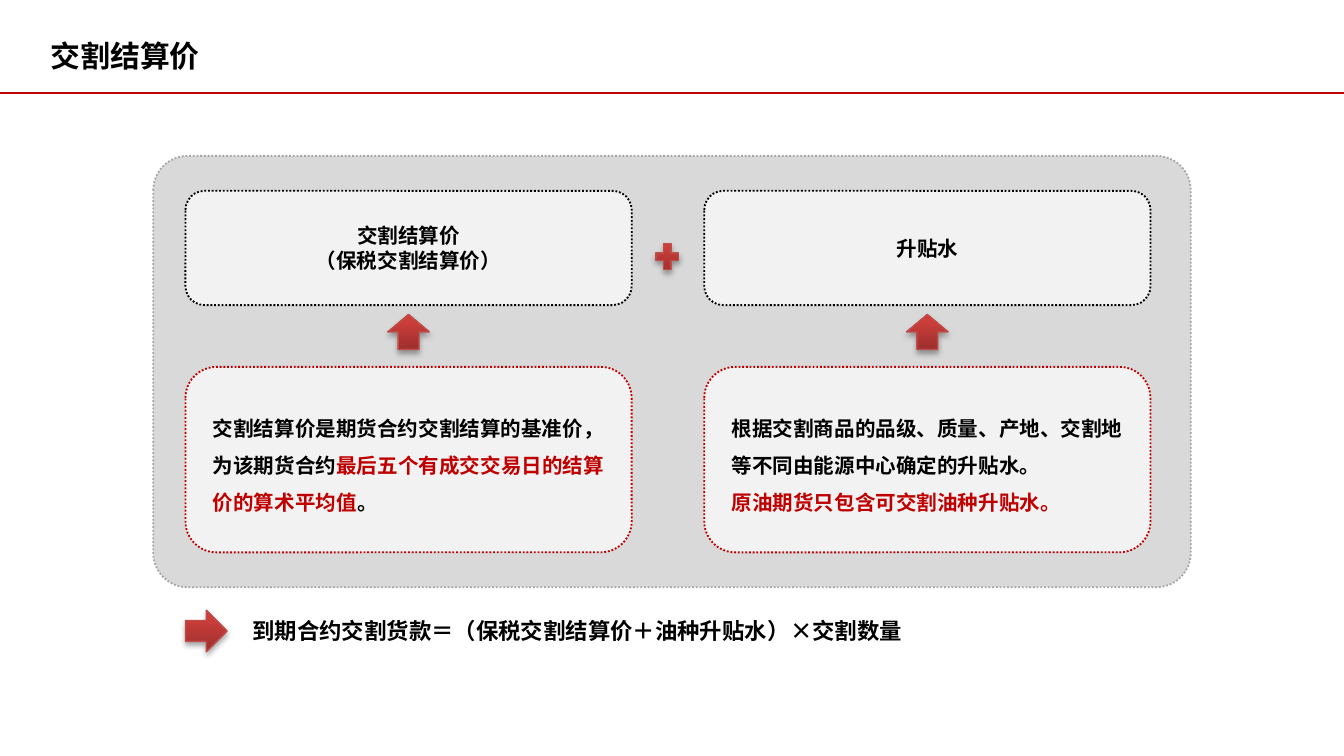
import pptx
import pptx.dml.color
import pptx.enum.dml
import pptx.enum.shapes
import pptx.enum.text
import pptx.oxml
import pptx.oxml.ns
import pptx.util
from pptx.util import Inches

FONT = "Noto Sans CJK SC"
COLORS = {
    "black": "000000",
    "red": "C00000",
    "panel": "D9D9D9",
    "panel_line": "A6A6A6",
    "box": "F2F2F2",
    "marker_line": "BF4C48",
}
MARKER_STOPS = [(0, "9C2F2D"), (80, "CB3E3A"), (100, "CE3B37")]
PRESET = pptx.enum.shapes.MSO_SHAPE
ALIGN = pptx.enum.text.PP_ALIGN

SLIDE_WIDTH = 10
COLUMN_LEFTS = [1.38, 5.24]
COLUMN_WIDTH = 3.32
HEADINGS = [["交割结算价", "（保税交割结算价）"], ["升贴水"]]
# Each explanation is a list of paragraphs, each a list of (text, color) runs.
EXPLANATIONS = [
    [[("交割结算价是期货合约交割结算的基准价，为该期货合约", "black"),
      ("最后五个有成交交易日的结算价的算术平均值", "red"),
      ("。", "black")]],
    [[("根据交割商品的品级、质量、产地、交割地等不同由能源中心确定的升贴水。", "black")],
     [("原油期货只包含可交割油种升贴水。", "red")]],
]


def rgb(name):
    return pptx.dml.color.RGBColor.from_string(COLORS[name])


def drawing_xml(body):
    """Parse one DrawingML element whose tag is given without its namespace."""
    tag, rest = body[1:].split(" ", 1)
    return pptx.oxml.parse_xml(f"<a:{tag} {pptx.oxml.ns.nsdecls('a')} {rest}")


def write_paragraphs(text_frame, paragraphs, size, align=ALIGN.LEFT, line_spacing=None):
    for index, runs in enumerate(paragraphs):
        paragraph = text_frame.paragraphs[0] if index == 0 else text_frame.add_paragraph()
        paragraph.alignment = align
        if line_spacing:
            paragraph.line_spacing = line_spacing
        for text, color in runs:
            run = paragraph.add_run()
            run.text = text
            run.font.size = pptx.util.Pt(size)
            run.font.bold = True
            run.font.color.rgb = rgb(color)
            run.font.name = FONT
            # The East Asian typeface has no public setter.
            run._r.get_or_add_rPr().append(drawing_xml(f'<ea typeface="{FONT}"/>'))


def add_label(slide, left, top, width, height, text, size):
    box = slide.shapes.add_textbox(Inches(left), Inches(top), Inches(width), Inches(height))
    box.text_frame.word_wrap = True
    box.text_frame.vertical_anchor = pptx.enum.text.MSO_ANCHOR.MIDDLE
    write_paragraphs(box.text_frame, [[(text, "black")]], size)


def add_dotted_box(slide, left, top, width, height, fill, line):
    shape = slide.shapes.add_shape(
        PRESET.ROUNDED_RECTANGLE, Inches(left), Inches(top), Inches(width), Inches(height))
    shape.shadow.inherit = False
    shape.fill.solid()
    shape.fill.fore_color.rgb = rgb(fill)
    shape.line.color.rgb = rgb(line)
    shape.line.width = pptx.util.Pt(1)
    shape.line.dash_style = pptx.enum.dml.MSO_LINE.ROUND_DOT
    shape.text_frame.word_wrap = True
    shape.text_frame.vertical_anchor = pptx.enum.text.MSO_ANCHOR.MIDDLE
    return shape


def add_marker(slide, preset, left, top, width, height):
    """Add a red gradient arrow or plus with a soft shadow below it."""
    shape = slide.shapes.add_shape(
        preset, Inches(left), Inches(top), Inches(width), Inches(height))
    shape.line.color.rgb = rgb("marker_line")
    shape.line.width = pptx.util.Pt(0.75)
    shape.fill.gradient()
    shape.fill.gradient_angle = 90
    properties = shape._element.spPr
    stop_list = properties.find(".//" + pptx.oxml.ns.qn("a:gsLst"))
    for stop in list(stop_list):
        stop_list.remove(stop)
    for position, color in MARKER_STOPS:
        stop_list.append(drawing_xml(
            f'<gs pos="{position * 1000}"><a:srgbClr val="{color}"/></a:gs>'))
    blur, distance = pptx.util.Pt(3.1), pptx.util.Pt(1.8)
    shape.shadow.inherit = False
    properties.find(pptx.oxml.ns.qn("a:effectLst")).append(drawing_xml(
        f'<outerShdw blurRad="{blur}" dist="{distance}" dir="5400000" rotWithShape="0">'
        f'<a:srgbClr val="{COLORS["black"]}"><a:alpha val="35000"/></a:srgbClr></a:outerShdw>'))


def add_title_rule(slide, top):
    rule = slide.shapes.add_connector(
        pptx.enum.shapes.MSO_CONNECTOR.STRAIGHT,
        0, Inches(top), Inches(SLIDE_WIDTH), Inches(top))
    rule.line.color.rgb = rgb("red")
    rule.line.width = pptx.util.Pt(1)
    rule._element.spPr.append(drawing_xml("<effectLst />"))


def add_column(slide, left, heading, explanation):
    """Add a price component: heading box, up arrow and explanation box."""
    heading_box = add_dotted_box(slide, left, 1.42, COLUMN_WIDTH, 0.85, "box", "black")
    write_paragraphs(heading_box.text_frame, [[(line, "black")] for line in heading],
                     11, ALIGN.CENTER)
    explanation_box = add_dotted_box(slide, left, 2.73, COLUMN_WIDTH, 1.38, "box", "red")
    write_paragraphs(explanation_box.text_frame, explanation, 11, line_spacing=1.5)
    # Center the left-aligned block as a whole inside its box.
    explanation_box.text_frame._txBody.bodyPr.set("anchorCtr", "1")
    arrow_width = 0.31
    add_marker(slide, PRESET.UP_ARROW, left + (COLUMN_WIDTH - arrow_width) / 2, 2.34,
               arrow_width, 0.26)


def main():
    presentation = pptx.Presentation()
    presentation.slide_width = Inches(SLIDE_WIDTH)
    presentation.slide_height = Inches(SLIDE_WIDTH * 9 / 16)
    slide = presentation.slides.add_slide(presentation.slide_layouts[6])

    add_title_rule(slide, 0.69)
    panel = add_dotted_box(slide, 1.14, 1.16, 7.72, 3.21, "panel", "panel_line")
    panel.adjustments[0] = 0.08
    add_label(slide, 0.28, 0.14, 9.37, 0.55, "交割结算价", 16)

    for left, heading, explanation in zip(COLUMN_LEFTS, HEADINGS, EXPLANATIONS):
        add_column(slide, left, heading, explanation)
    add_marker(slide, PRESET.MATH_PLUS, 4.85, 1.78, 0.23, 0.26)

    add_marker(slide, PRESET.RIGHT_ARROW, COLUMN_LEFTS[0], 4.54, 0.31, 0.31)
    add_label(slide, 1.78, 4.54, 5.61, 0.3,
              "到期合约交割货款＝（保税交割结算价＋油种升贴水）×交割数量", 12)

    presentation.save("out.pptx")


if __name__ == "__main__":
    main()
